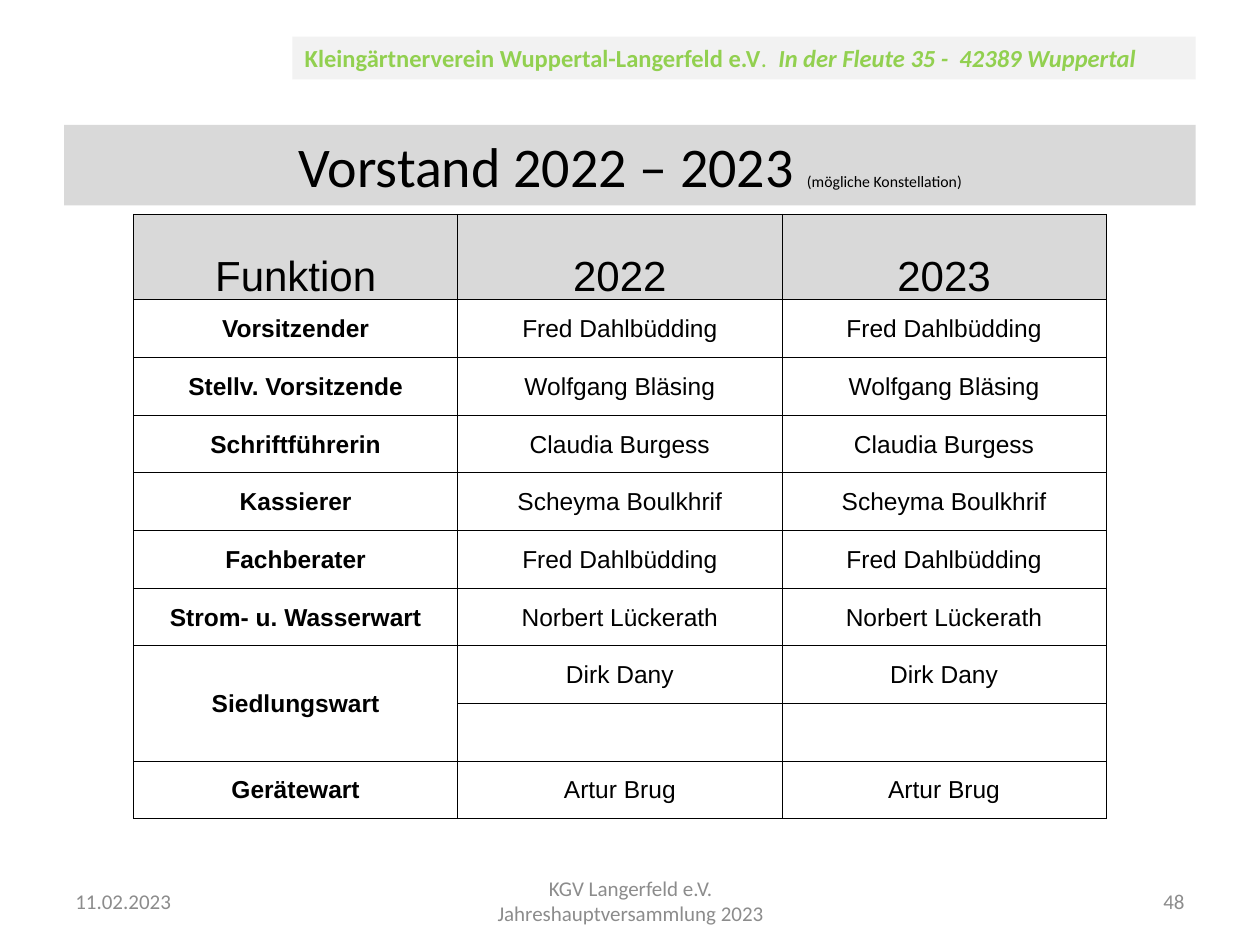
from lxml.etree import SubElement
from pptx import Presentation
from pptx.dml.color import RGBColor
from pptx.enum.shapes import MSO_SHAPE as Shape
from pptx.enum.text import MSO_ANCHOR as Anchor, PP_ALIGN as Align
from pptx.oxml.ns import qn
from pptx.util import Inches, Pt

BLACK, GREY, GREEN, MUTED = "000000", "D9D9D9", "92D050", "8C8C8C"
BOARD = [
    ("Vorsitzender", "Fred Dahlbüdding"),
    ("Stellv. Vorsitzende", "Wolfgang Bläsing"),
    ("Schriftführerin", "Claudia Burgess"),
    ("Kassierer", "Scheyma Boulkhrif"),
    ("Fachberater", "Fred Dahlbüdding"),
    ("Strom- u. Wasserwart", "Norbert Lückerath"),
    ("Siedlungswart", "Dirk Dany"),
    ("", ""),
    ("Gerätewart", "Artur Brug"),
]


def paint(target, color):
    target.solid()
    target.fore_color.rgb = RGBColor.from_string(color)


def write(frame, runs, align, color=BLACK, anchor=Anchor.MIDDLE, **base):
    frame.word_wrap = True
    frame.vertical_anchor = anchor
    paragraph = frame.paragraphs[0]
    paragraph.alignment = align
    for words, extra in runs:
        run = paragraph.add_run()
        run.text = words
        for key, value in {"name": "Calibri", **base, **extra}.items():
            setattr(run.font, key, value)
        paint(run.font.fill, color)


def add_banner(slide, box):
    banner = slide.shapes.add_shape(Shape.RECTANGLE, *map(Inches, box))
    banner.shadow.inherit = False
    paint(banner.fill, "F2F2F2")
    banner.line.fill.background()
    write(banner.text_frame, [
        ("Kleingärtnerverein Wuppertal-Langerfeld e.V", {"bold": True}),
        (".  ", {"bold": False}),
        ("In der Fleute 35 -  42389 Wuppertal", {"bold": True, "italic": True}),
    ], Align.LEFT, GREEN, Anchor.TOP, size=Pt(14))


def add_title(slide, box):
    title = slide.shapes.title
    title.left, title.top, title.width, title.height = map(Inches, box)
    paint(title.fill, GREY)
    write(title.text_frame, [
        ("Vorstand 2022 – 2023 ", {"size": Pt(32)}),
        ("(mögliche Konstellation)", {"size": Pt(9)}),
    ], Align.CENTER, anchor=Anchor.TOP)


def border(cell):
    properties = cell._tc.get_or_add_tcPr()
    for side in ("a:lnL", "a:lnR", "a:lnT", "a:lnB"):
        edge = SubElement(properties, qn(side), w=str(Pt(0.5)))
        SubElement(SubElement(edge, qn("a:solidFill")), qn("a:srgbClr"), val=BLACK)


def fill_cell(cell, words, color, anchor, **font):
    border(cell)
    paint(cell.fill, color)
    cell.margin_left = cell.margin_right = cell.margin_top = Inches(0.01)
    cell.margin_bottom = 0
    cell.vertical_anchor = anchor
    if words:
        write(cell.text_frame, [(words, font)], Align.CENTER, anchor=anchor, name="Arial")


def add_board_table(slide, box, head_height=0.68):
    height = box[3]
    table = slide.shapes.add_table(len(BOARD) + 1, 3, *map(Inches, box)).table
    table.first_row = table.horz_banding = False
    table.rows[0].height = Inches(head_height)
    for column, heading in enumerate(("Funktion", "2022", "2023")):
        fill_cell(table.cell(0, column), heading, GREY, Anchor.BOTTOM, size=Pt(24))
    for row, (office, holder) in enumerate(BOARD, 1):
        table.rows[row].height = Inches((height - head_height) / len(BOARD))
        for column, words in enumerate((office, holder, holder)):
            fill_cell(table.cell(row, column), words, "FFFFFF", Anchor.MIDDLE,
                      size=Pt(14), bold=column == 0)
    warden = [office for office, _ in BOARD].index("Siedlungswart") + 1
    table.cell(warden, 0).merge(table.cell(warden + 1, 0))


def add_footer(slide, top, height):
    for left, width, words, align in (
        (0.5, 2.33, "11.02.2023", Align.LEFT),
        (3.42, 3.17, "KGV Langerfeld e.V. Jahreshauptversammlung 2023", Align.CENTER),
        (7.17, 2.33, "48", Align.RIGHT),
    ):
        part = slide.shapes.add_textbox(*map(Inches, (left, top, width, height)))
        write(part.text_frame, [(words, {})], align, MUTED, size=Pt(12))


def main():
    deck = Presentation()
    deck.slide_width, deck.slide_height = Inches(10), Inches(7.5)
    slide = deck.slides.add_slide(deck.slide_layouts[5])
    add_banner(slide, (2.32, 0.29, 7.17, 0.34))
    add_footer(slide, 6.95, 0.4)
    add_title(slide, (0.51, 0.99, 8.98, 0.64))
    add_board_table(slide, (1.06, 1.7, 7.72, 4.8))
    deck.save("out.pptx")


if __name__ == "__main__":
    main()
